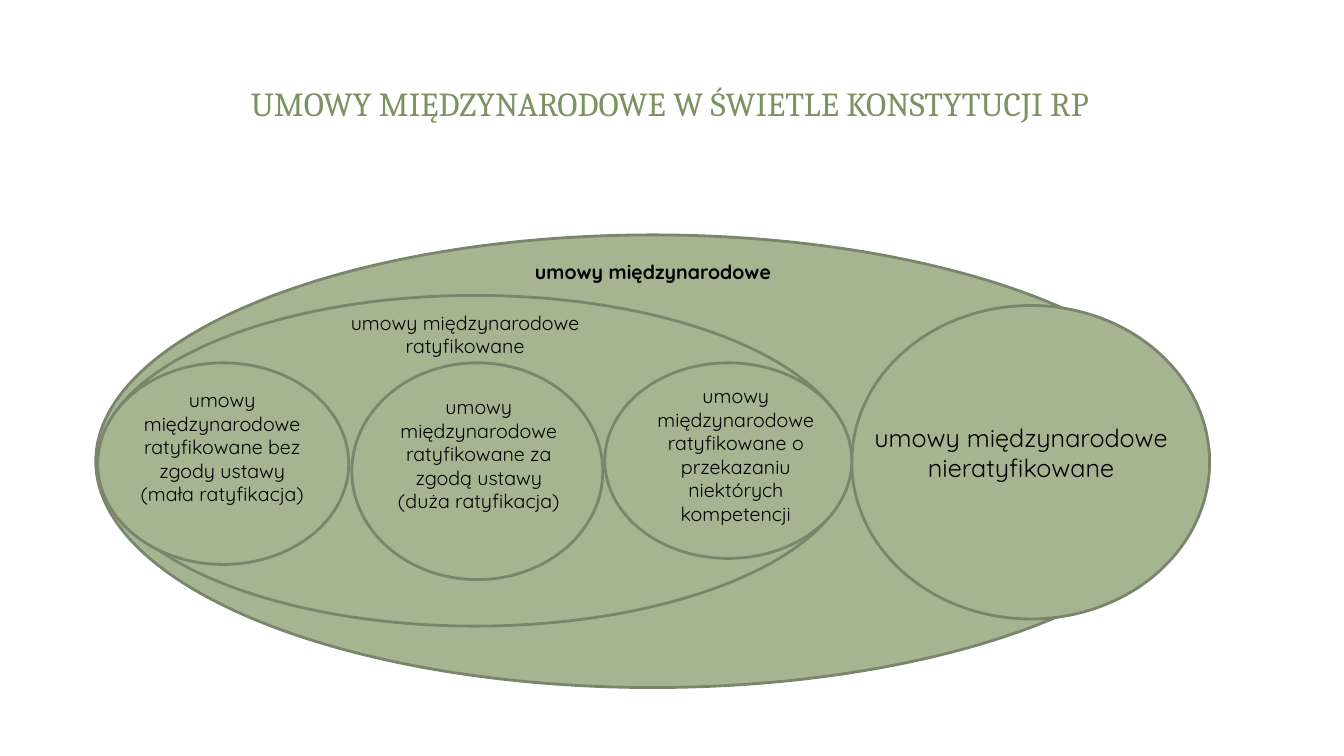
from pptx import Presentation
from pptx.dml.color import RGBColor
from pptx.enum.shapes import MSO_SHAPE
from pptx.enum.text import MSO_ANCHOR, PP_ALIGN
from pptx.util import Pt

GREEN = RGBColor(0xA5, 0xB5, 0x92)
EDGE = RGBColor(0x7A, 0x86, 0x6C)
HEAD = RGBColor(0x7D, 0x92, 0x63)
BLACK = RGBColor(0, 0, 0)

# Content: boxes are left, top, width, height in points
TITLE = "UMOWY MIĘDZYNARODOWE W ŚWIETLE KONSTYTUCJI RP"
TITLE_BOX = (44.6, 32.4, 867.6, 82.1)

# Each set: oval, label box, label paragraphs, label format
SETS = [
    ((68.4, 167.8, 795.6, 323.3), (360, 182.2, 213.1, 24.5),
     ["umowy międzynarodowe"], {"bold": True}),
    ((70.6, 211, 537.8, 236.2), (221.8, 218.2, 221, 41),
     ["umowy międzynarodowe ratyfikowane"], {}),
    ((608.4, 218.2, 255.6, 223.9), (594.7, 298.1, 269.3, 51.1),
     ["umowy międzynarodowe nieratyfikowane"], {"size": 18}),
    ((69.8, 259.2, 179.3, 144), (79.2, 273.6, 159.1, 92.2),
     ["umowy międzynarodowe ratyfikowane bez zgody ustawy",
      "(mała ratyfikacja)"], {}),
    ((251.3, 259.2, 179.3, 154.8), (268.6, 278.6, 146.9, 92.2),
     ["umowy międzynarodowe ratyfikowane za zgodą ustawy",
      "(duża ratyfikacja)"], {}),
    ((432, 259.2, 176.4, 139.7), (450.7, 270.7, 149.8, 108.7),
     ["umowy międzynarodowe ratyfikowane o przekazaniu niektórych kompetencji"],
     {}),
]

deck = Presentation()
deck.slide_width, deck.slide_height = Pt(960), Pt(540)
slide = deck.slides.add_slide(deck.slide_layouts[6])


def add_text(lines, box, size=14, font="Quicksand", color=BLACK, bold=False,
             anchor=MSO_ANCHOR.TOP):
    frame = slide.shapes.add_textbox(*map(Pt, box)).text_frame
    frame.word_wrap = True
    frame.vertical_anchor = anchor
    frame.text = "\n".join(lines)
    for para in frame.paragraphs:
        para.alignment = PP_ALIGN.CENTER
        face = para.runs[0].font
        face.size, face.name, face.bold = Pt(size), font, bold
        face.color.rgb = color


def add_oval(box):
    oval = slide.shapes.add_shape(MSO_SHAPE.OVAL, *map(Pt, box))
    oval.shadow.inherit = False
    oval.fill.solid()
    oval.fill.fore_color.rgb = GREEN
    oval.line.color.rgb = EDGE
    oval.line.width = Pt(2)


# Title
add_text([TITLE], TITLE_BOX, size=24, font="Cambria", color=HEAD,
         anchor=MSO_ANCHOR.MIDDLE)

# Nested sets, outermost first
for oval, box, lines, style in SETS:
    add_oval(oval)
    add_text(lines, box, **style)

deck.save("out.pptx")
